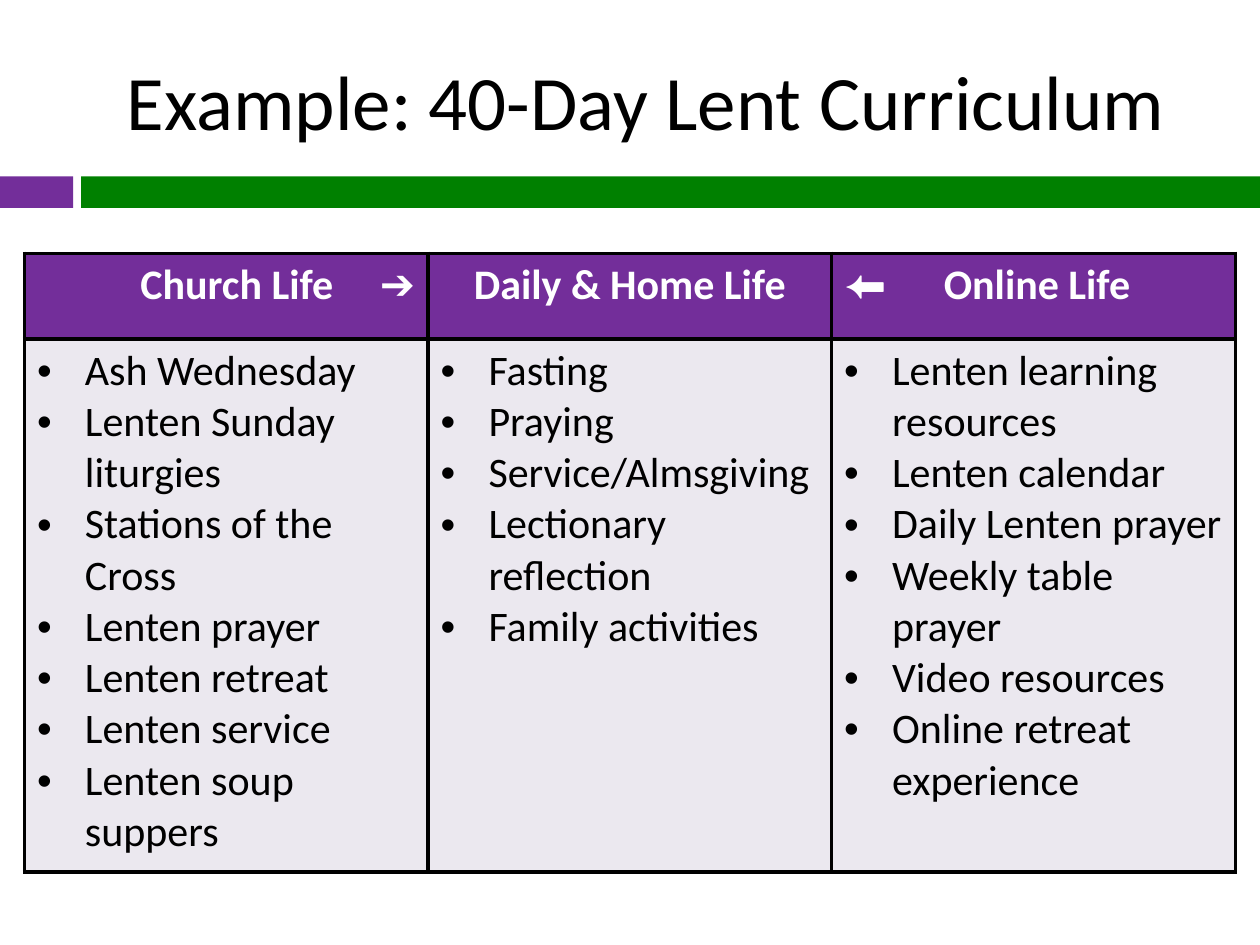
from dataclasses import dataclass
from typing import NamedTuple

from lxml import etree
from pptx import Presentation
from pptx import util as u
from pptx.dml.color import RGBColor
from pptx.enum import shapes, text
from pptx.oxml import ns

WIDE, HIGH = u.Inches(10), u.Inches(7.5)


@dataclass(frozen=True)
class Theme:
    face: str = "Calibri"
    ink: str = "000000"
    pale: str = "FFFFFF"
    plum: str = "732E9A"
    green: str = "008000"
    mist: str = "EBE8EF"
    title: int = 44
    body: int = 24
    rule: float = 2.25


class Box(NamedTuple):
    """Left, top, width and height in percent of the slide."""
    left: float
    top: float
    wide: float
    high: float

    def size(self) -> list[int]:
        spans = (WIDE, HIGH, WIDE, HIGH)
        return [int(span * share / 100) for span, share in zip(spans, self)]


class Bar(NamedTuple):
    box: Box
    fill: str


class Topic(NamedTuple):
    head: str
    align: text.PP_ALIGN
    tabs: tuple[float, ...]
    items: tuple[str, ...]


THEME = Theme()
LEFT, MID = text.PP_ALIGN.LEFT, text.PP_ALIGN.CENTER
TITLE = Box(6.7, 3.33, 89.2, 14.4)
GRID = Box(1.94, 26.8, 96.1, 65.47)
HEAD = 0.68
INDENT = 0.38
BARS = (
    Bar(Box(0, 18.67, 5.8, 3.33), THEME.plum),
    Bar(Box(6.45, 18.67, 93.55, 3.33), THEME.green),
)
TOPICS = (
    Topic("\tChurch Life\t➔", LEFT, (0.82, 2.72), (
        "Ash Wednesday", "Lenten Sunday liturgies", "Stations of the Cross",
        "Lenten prayer", "Lenten retreat", "Lenten service",
        "Lenten soup suppers")),
    Topic("Daily & Home Life", MID, (), (
        "Fasting", "Praying", "Service/Almsgiving", "Lectionary reflection",
        "Family activities")),
    Topic("⬅\tOnline Life", LEFT, (0.79,), (
        "Lenten learning resources", "Lenten calendar", "Daily Lenten prayer",
        "Weekly table prayer", "Video resources",
        "Online retreat experience")),
)


def node(root, tag: str, **attrs):
    return etree.SubElement(root, ns.qn(f"a:{tag}"), attrs)


def write(para, words: str, size: int, hue: str, bold: bool = False) -> None:
    run = para.add_run()
    run.text = words
    style = {"name": THEME.face, "size": u.Pt(size), "bold": bold}
    for key, value in style.items():
        setattr(run.font, key, value)
    run.font.color.rgb = RGBColor.from_string(hue)


def paint(item, hue: str) -> None:
    item.fill.solid()
    item.fill.fore_color.rgb = RGBColor.from_string(hue)


def draw_bar(slide, bar: Bar) -> None:
    shape = slide.shapes.add_shape(shapes.MSO_SHAPE.RECTANGLE, *bar.box.size())
    shape.shadow.inherit = False
    paint(shape, bar.fill)
    shape.line.fill.background()


def draw_title(slide, words: str) -> None:
    frame = slide.shapes.add_textbox(*TITLE.size()).text_frame
    style = {"word_wrap": True, "vertical_anchor": text.MSO_ANCHOR.MIDDLE}
    for key, value in style.items():
        setattr(frame, key, value)
    para = frame.paragraphs[0]
    para.alignment = MID
    write(para, words, THEME.title, THEME.ink)


def dress(cell, hue: str) -> None:
    props = cell._tc.get_or_add_tcPr()
    for side in "LRTB":
        line = node(props, f"ln{side}", w=str(u.Pt(THEME.rule)))
        node(node(line, "solidFill"), "srgbClr", val=THEME.ink)
    paint(cell, hue)


def fill_head(cell, topic: Topic) -> None:
    dress(cell, THEME.plum)
    para = cell.text_frame.paragraphs[0]
    para.alignment = topic.align
    if topic.tabs:
        stops = node(para._p.get_or_add_pPr(), "tabLst")
        for stop in topic.tabs:
            node(stops, "tab", pos=str(u.Inches(stop)), algn="l")
    write(para, topic.head, THEME.body, THEME.pale, True)


def fill_body(cell, topic: Topic) -> None:
    dress(cell, THEME.mist)
    frame = cell.text_frame
    for spot, item in enumerate(topic.items):
        para = frame.add_paragraph() if spot else frame.paragraphs[0]
        props = para._p.get_or_add_pPr()
        marks = {"marL": u.Inches(INDENT), "indent": -u.Inches(INDENT)}
        for key, value in marks.items():
            props.set(key, str(value))
        node(props, "buFont", typeface="Arial")
        node(props, "buChar", char="•")
        write(para, item, THEME.body, THEME.ink)


def draw_table(slide, topics: tuple[Topic, ...]) -> None:
    table = slide.shapes.add_table(2, len(topics), *GRID.size()).table
    for key, value in {"first_row": False, "horz_banding": False}.items():
        setattr(table, key, value)
    head = u.Inches(HEAD)
    for row, high in zip(table.rows, (head, GRID.size()[3] - head)):
        row.height = high
    for col, topic in enumerate(topics):
        fill_head(table.cell(0, col), topic)
        fill_body(table.cell(1, col), topic)


def main() -> None:
    deck = Presentation()
    for key, value in {"slide_width": WIDE, "slide_height": HIGH}.items():
        setattr(deck, key, value)
    slide = deck.slides.add_slide(deck.slide_layouts[6])
    for bar in BARS:
        draw_bar(slide, bar)
    draw_title(slide, "Example: 40-Day Lent Curriculum")
    draw_table(slide, TOPICS)
    deck.save("out.pptx")


if __name__ == "__main__":
    main()
